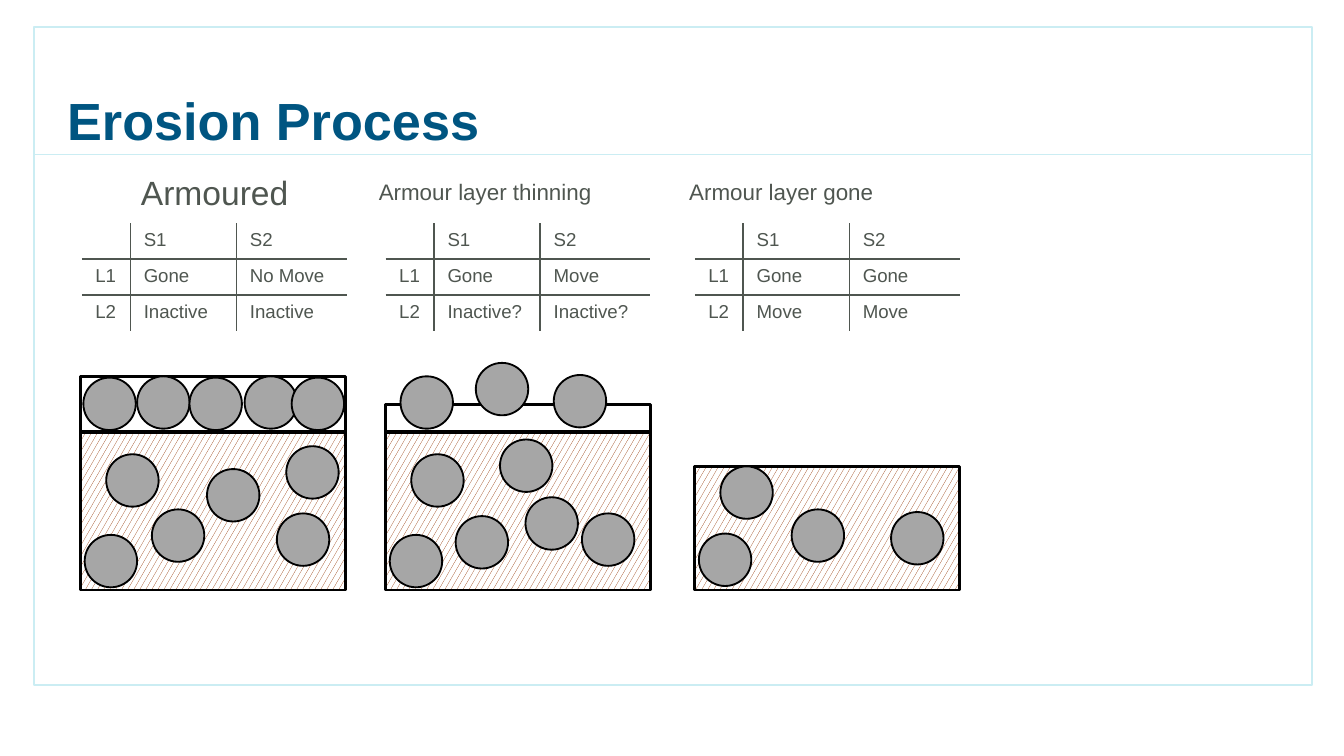
from lxml import etree
from pptx import Presentation
from pptx.dml.color import RGBColor
from pptx.enum.dml import MSO_PATTERN
from pptx.enum.shapes import MSO_CONNECTOR, MSO_SHAPE
from pptx.enum.text import MSO_ANCHOR, MSO_AUTO_SIZE, PP_ALIGN
from pptx.oxml import parse_xml
from pptx.oxml.ns import nsdecls, qn
from pptx.util import Inches, Pt

COLORS = {
    "frame": "CBEDF3",
    "title": "005581",
    "text": "4F5650",
    "outline": "000000",
    "stone": "A6A6A6",
    "hatch": "943400",
    "paper": "FFFFFF",
}
FONT = "Arial"
STONE = 0.39
BED_W = 1.97
BED_BOTTOM = 4.39
TABLE_TOP = 1.66
TABLE_H = 0.8
COL_WIDTHS = (0.36, 0.79, 0.82)
ROW_HEIGHTS = (0.21, 0.21, 0.22)
NO_STYLE_NO_GRID = "{2D5ABB26-0587-4C30-8999-92F81FD0307C}"

PANELS = [
    {
        "heading": ("Armoured", 0.95, 1.23, 1.31, 0.4, 18, False),
        "table": (0.61, [("Gone", "No Move"), ("Inactive", "Inactive")]),
        "bed": (0.6, 3.21),
        "armour": (2.8, 0.42),
        "stones": [(1.54, 3.49), (1.13, 3.79), (2.06, 3.82), (0.79, 3.38),
                   (0.63, 3.98), (2.13, 3.32), (0.62, 2.81), (1.02, 2.8),
                   (1.41, 2.81), (1.82, 2.8), (2.17, 2.81)],
    },
    {
        "heading": ("Armour layer thinning", 2.72, 1.28, 2.13, 0.3, 12, True),
        "table": (2.87, [("Gone", "Move"), ("Inactive?", "Inactive?")]),
        "bed": (2.87, 3.21),
        "armour": (3.01, 0.21),
        "stones": [(2.98, 2.8), (3.54, 2.7), (4.12, 2.79), (3.72, 3.27),
                   (3.39, 3.84), (4.33, 3.82), (3.06, 3.38), (2.9, 3.98),
                   (3.91, 3.7)],
    },
    {
        "heading": ("Armour layer gone", 5.03, 1.28, 2.13, 0.3, 12, True),
        "table": (5.17, [("Gone", "Gone"), ("Move", "Move")]),
        "bed": (5.17, 3.47),
        "armour": None,
        "stones": [(5.89, 3.79), (6.63, 3.81), (5.36, 3.47), (5.2, 3.97)],
    },
]


def rgb(name):
    return RGBColor.from_string(COLORS[name])


class Deck:
    def __init__(self, width):
        self.prs = Presentation()
        self.prs.slide_width = Inches(width)
        self.prs.slide_height = Inches(width * 9 / 16)
        self.s = self.prs.slides.add_slide(self.prs.slide_layouts[5])

    def style(self, p, size, color, bold=False):
        for r in p.runs:
            r.font.name = FONT
            r.font.size = Pt(size)
            r.font.bold = bold
            r.font.color.rgb = rgb(color)

    def title(self, text, x, y, w, h):
        sp = self.s.shapes.title
        sp.left, sp.top, sp.width, sp.height = map(Inches, (x, y, w, h))
        tf = sp.text_frame
        tf.text = text
        tf.vertical_anchor = MSO_ANCHOR.BOTTOM
        tf.auto_size = MSO_AUTO_SIZE.NONE
        tf.margin_left = tf.margin_top = tf.margin_right = tf.margin_bottom = 0
        p = tf.paragraphs[0]
        p.alignment = PP_ALIGN.LEFT
        self.style(p, 28, "title", True)

    def text(self, text, x, y, w, h, size, wrap):
        sp = self.s.shapes.add_textbox(*map(Inches, (x, y, w, h)))
        tf = sp.text_frame
        tf.word_wrap = wrap
        tf.auto_size = MSO_AUTO_SIZE.SHAPE_TO_FIT_TEXT
        tf.text = text
        self.style(tf.paragraphs[0], size, "text")

    def shape(self, kind, x, y, w, h, line="outline", width=1.5):
        sp = self.s.shapes.add_shape(kind, *map(Inches, (x, y, w, h)))
        sp.shadow.inherit = False
        sp.fill.background()
        sp.line.color.rgb = rgb(line)
        sp.line.width = Pt(width)
        return sp

    def bed(self, x, y):
        sp = self.shape(MSO_SHAPE.RECTANGLE, x, y, BED_W, BED_BOTTOM - y)
        sp.fill.patterned()
        sp.fill.pattern = MSO_PATTERN.LARGE_CONFETTI
        sp.fill.fore_color.rgb = rgb("hatch")
        sp.fill.back_color.rgb = rgb("paper")

    def stone(self, x, y):
        sp = self.shape(MSO_SHAPE.OVAL, x, y, STONE, STONE, width=1)
        sp.fill.solid()
        sp.fill.fore_color.rgb = rgb("stone")

    def rule(self, x1, y1, x2, y2):
        cx = self.s.shapes.add_connector(
            MSO_CONNECTOR.STRAIGHT, *map(Inches, (x1, y1, x2, y2)))
        cx.line.color.rgb = rgb("frame")
        cx.line.width = Pt(1)
        etree.SubElement(cx._element.spPr, qn("a:effectLst"))

    def borders(self, cell, sides):
        tc_pr = cell._tc.get_or_add_tcPr()
        for i, side in enumerate(sides):
            tc_pr.insert(i, parse_xml(
                f'<a:ln{side} {nsdecls("a")} w="{Pt(1)}"><a:solidFill>'
                f'<a:srgbClr val="{COLORS["text"]}"/></a:solidFill></a:ln{side}>'))

    def table(self, x, outcomes):
        rows = [("", "S1", "S2")]
        rows += [(f"L{i}", *row) for i, row in enumerate(outcomes, 1)]
        frame = self.s.shapes.add_table(
            len(rows), len(COL_WIDTHS), Inches(x), Inches(TABLE_TOP),
            Inches(sum(COL_WIDTHS)), Inches(TABLE_H))
        tbl = frame.table
        tbl.first_row = tbl.horz_banding = False
        tbl._tbl.tblPr.find(qn("a:tableStyleId")).text = NO_STYLE_NO_GRID
        for col, width in zip(tbl.columns, COL_WIDTHS):
            col.width = Inches(width)
        for row, height in zip(tbl.rows, ROW_HEIGHTS):
            row.height = Inches(height)
        frame.height = Inches(TABLE_H)
        for i, row in enumerate(rows):
            for j, text in enumerate(row):
                cell = tbl.cell(i, j)
                cell.fill.background()
                cell.text = text
                p = cell.text_frame.paragraphs[0]
                self.style(p, 10, "text")
                if not text:
                    etree.SubElement(p._p, qn("a:endParaRPr"), sz="1000")
                edges = {"L": j == 1, "R": j == 0, "T": i == 1, "B": i == 0}
                self.borders(cell, [side for side, on in edges.items() if on])

    def panel(self, heading, table, bed, armour, stones):
        self.text(*heading)
        self.table(*table)
        self.bed(*bed)
        if armour:
            top, height = armour
            self.shape(MSO_SHAPE.RECTANGLE, bed[0], top, BED_W, height)
        for x, y in stones:
            self.stone(x, y)


def main():
    deck = Deck(10)
    deck.shape(MSO_SHAPE.RECTANGLE, 0.25, 0.2, 9.51, 4.9, "frame", 1)
    deck.rule(0.25, 1.15, 9.76, 1.15)
    deck.title("Erosion Process", 0.5, 0.25, 9, 0.87)
    for panel in PANELS:
        deck.panel(**panel)
    deck.prs.save("out.pptx")


if __name__ == "__main__":
    main()
